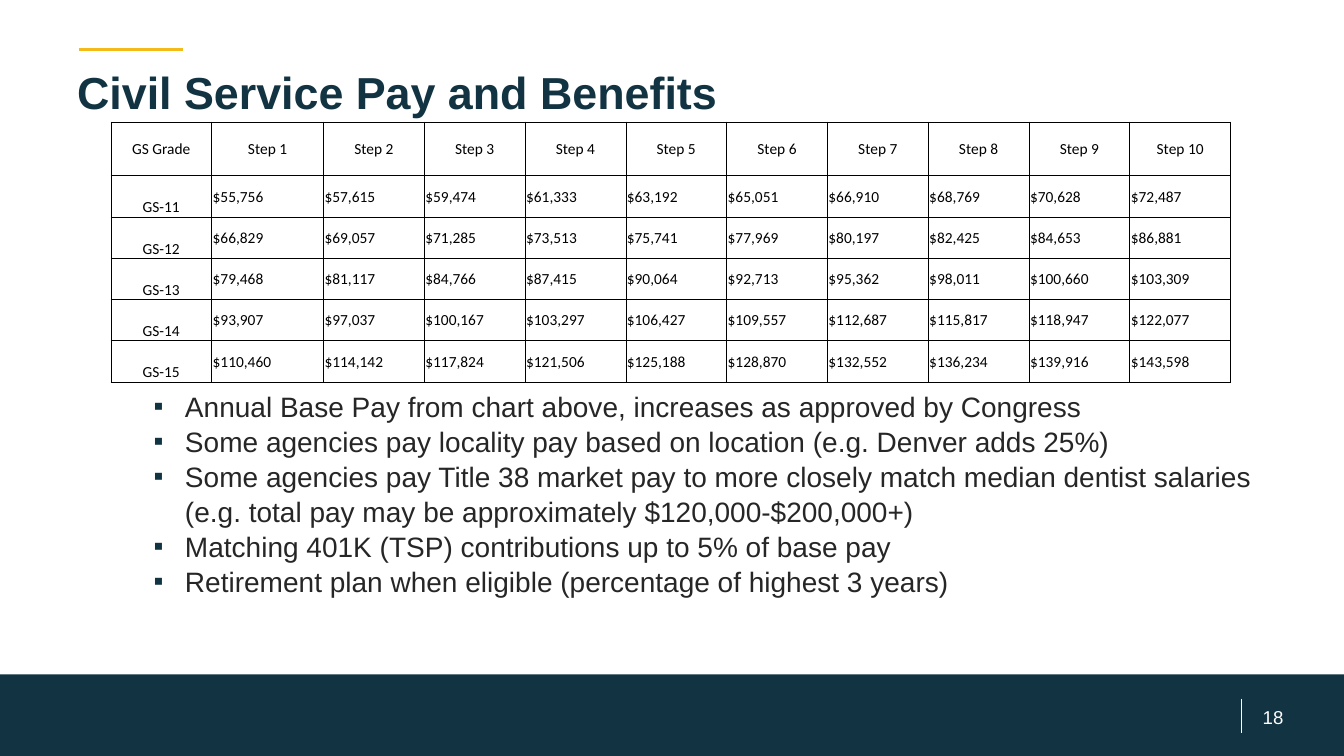
from lxml.etree import SubElement
from pptx import Presentation
from pptx.dml.color import RGBColor
from pptx.enum.shapes import MSO_CONNECTOR, MSO_SHAPE
from pptx.enum.text import MSO_ANCHOR, PP_ALIGN
from pptx.oxml.ns import qn
from pptx.util import Inches, Pt

C = {"navy": "123342", "gold": "F4BA18", "white": "FFFFFF", "text": "262626", "black": "000000"}

prs = Presentation()
prs.slide_width, prs.slide_height = Inches(13.33), Inches(7.5)
s = prs.slides.add_slide(prs.slide_layouts[6])
COL, ROW = prs.slide_width / 40, prs.slide_height / 24


def grid(x, y, w, h):
    return [round(v * unit) for v, unit in zip((x, y, w, h), (COL, ROW, COL, ROW))]


def style(p, size, color, font="Arial", bold=False):
    for r in p.runs:
        r.font.size, r.font.name, r.font.bold = Pt(size), font, bold
        r.font.color.rgb = RGBColor.from_string(C[color])


sp = s.shapes.add_shape(MSO_SHAPE.RECTANGLE, *grid(0, 21.41, 40, 2.59))
sp.shadow.inherit = False
sp.fill.solid()
sp.fill.fore_color.rgb = RGBColor.from_string(C["navy"])
sp.line.fill.background()

for x1, y1, x2, y2, color, width in [
    (2.34, 1.57, 5.46, 1.57, "gold", 2.5),
    (36.96, 22.18, 36.96, 23.26, "white", 0.75),
]:
    ln = s.shapes.add_connector(MSO_CONNECTOR.STRAIGHT, *grid(x1, y1, x2, y2))
    ln.line.color.rgb = RGBColor.from_string(C[color])
    ln.line.width = Pt(width)
    SubElement(ln._element.spPr, qn("a:effectLst"))

tf = s.shapes.add_textbox(*grid(36.72, 22.3, 2.34, 0.9)).text_frame
tf.word_wrap = True
tf.vertical_anchor = MSO_ANCHOR.MIDDLE
tf.margin_left = tf.margin_right = Inches(0.13)
tf.margin_top = tf.margin_bottom = Inches(0.07)
tf.text = "18"
tf.paragraphs[0].alignment = PP_ALIGN.CENTER
style(tf.paragraphs[0], 13.3, "white")

tf = s.shapes.add_textbox(*grid(2, 12.13, 36, 8.13)).text_frame
tf.word_wrap = True
tf.margin_top = Inches(0.06)
tf.text = "\n".join([
    "Annual Base Pay from chart above, increases as approved by Congress",
    "Some agencies pay locality pay based on location (e.g. Denver adds 25%)",
    "Some agencies pay Title 38 market pay to more closely match median dentist salaries "
    "(e.g. total pay may be approximately $120,000-$200,000+)",
    "Matching 401K (TSP) contributions up to 5% of base pay",
    "Retirement plan when eligible (percentage of highest 3 years)",
])
for p in tf.paragraphs:
    pPr = p._p.get_or_add_pPr()
    pPr.set("marL", str(Inches(1.07)))
    pPr.set("indent", str(Inches(-0.31)))
    SubElement(SubElement(pPr, qn("a:buClr")), qn("a:srgbClr"), val=C["navy"])
    SubElement(pPr, qn("a:buFont"), typeface="Arial")
    SubElement(pPr, qn("a:buChar"), char="▪")
    p.level = 1
    p.line_spacing = 1.04
    style(p, 20, "text")

pay = [
    ["GS Grade"] + [f"Step {n}" for n in range(1, 11)],
    "GS-11 $55,756 $57,615 $59,474 $61,333 $63,192 $65,051 $66,910 $68,769 $70,628 $72,487".split(),
    "GS-12 $66,829 $69,057 $71,285 $73,513 $75,741 $77,969 $80,197 $82,425 $84,653 $86,881".split(),
    "GS-13 $79,468 $81,117 $84,766 $87,415 $90,064 $92,713 $95,362 $98,011 $100,660 $103,309".split(),
    "GS-14 $93,907 $97,037 $100,167 $103,297 $106,427 $109,557 $112,687 $115,817 $118,947 $122,077".split(),
    "GS-15 $110,460 $114,142 $117,824 $121,506 $125,188 $128,870 $132,552 $136,234 $139,916 $143,598".split(),
]
tbl = s.shapes.add_table(len(pay), len(pay[0]), *grid(3.3, 3.87, 33.33, 8.26)).table
tbl.first_row = tbl.horz_banding = False
for j, column in enumerate(tbl.columns):
    column.width = round((3.33 if j == 1 else 3) * COL)
for i, row in enumerate(tbl.rows):
    row.height = round((1.31 if i else 1.71) * ROW)
    for j, cell in enumerate(row.cells):
        cell.text = pay[i][j]
        cell.margin_left = cell.margin_right = cell.margin_top = Inches(0.01)
        cell.margin_bottom = 0
        cell.vertical_anchor = MSO_ANCHOR.BOTTOM if i and j == 0 else MSO_ANCHOR.MIDDLE
        p = cell.text_frame.paragraphs[0]
        p.alignment = PP_ALIGN.LEFT if i and j else PP_ALIGN.CENTER
        style(p, 11, "black", "Calibri")
        for side in ("lnL", "lnR", "lnT", "lnB"):
            ln = SubElement(cell._tc.get_or_add_tcPr(), qn(f"a:{side}"), w=str(Pt(0.5)))
            SubElement(SubElement(ln, qn("a:solidFill")), qn("a:srgbClr"), val=C["black"])
        cell.fill.background()

tf = s.shapes.add_textbox(*grid(2, 1.7, 36, 3.1)).text_frame
tf.word_wrap = True
tf.margin_top = Inches(0.11)
tf.text = "Civil Service Pay and Benefits"
style(tf.paragraphs[0], 32, "navy", bold=True)

prs.save("out.pptx")
